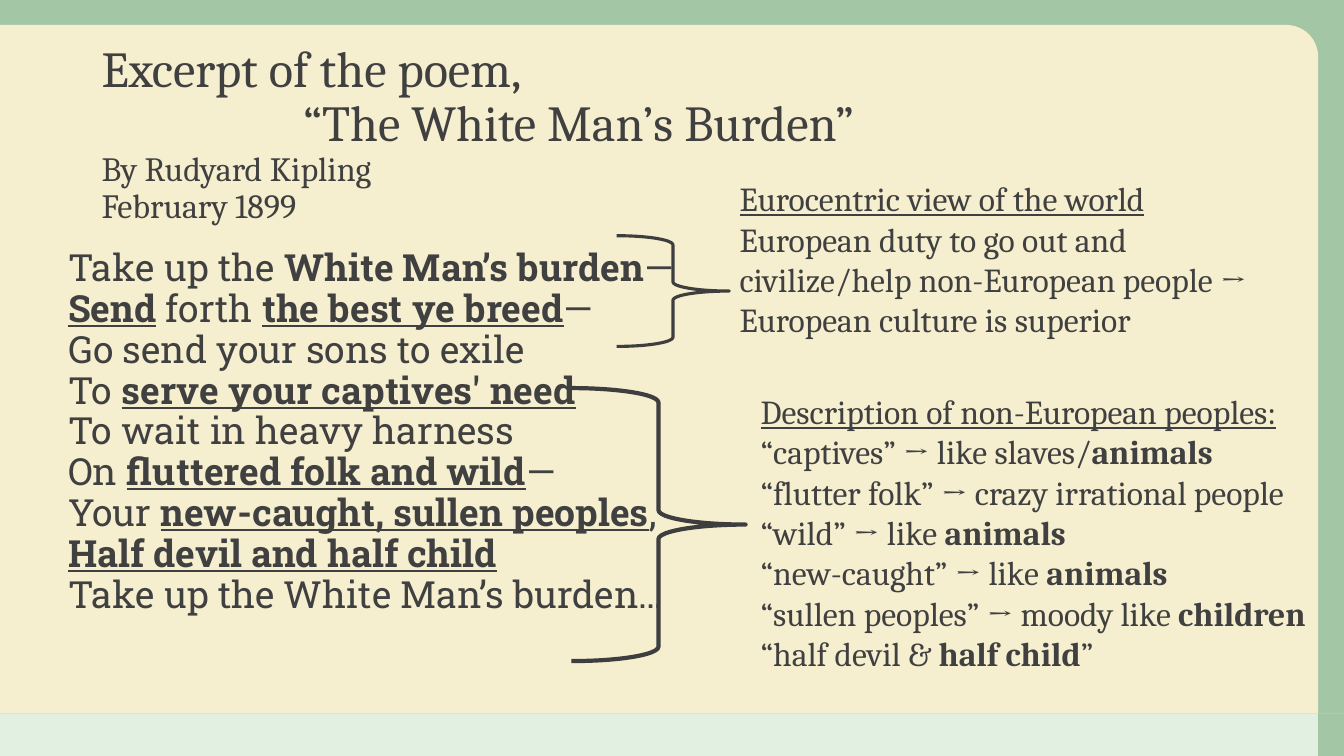
from lxml import etree
from pptx import Presentation
from pptx import util as u
from pptx.dml.color import RGBColor
from pptx.enum import shapes, text
from pptx.oxml.ns import qn

INK = "404040"
BRACE = "3E3E3E"
GREEN = "488E4A"
MINT = "D6EBD6"
CREAM = "F5EECF"
SERIF = "Cambria"
SLAB = "Roboto Slab"


def color(value):
    return RGBColor.from_string(value)


class PoemSlide:
    """Holds the style and the current slide."""

    def __init__(self, deck):
        self.page = deck.slides.add_slide(deck.slide_layouts[6])

    def shape(self, kind, place, adjust=()):
        shape = self.page.shapes.add_shape(kind, *map(u.Cm, place))
        shape.shadow.inherit = False
        for index, value in enumerate(adjust):
            shape.adjustments[index] = value
        return shape

    def panel(self, kind, place, fill, opacity=100, adjust=()):
        panel = self.shape(kind, place, adjust)
        panel.fill.solid()
        panel.fill.fore_color.rgb = color(fill)
        panel.line.fill.background()
        if opacity < 100:
            tint = panel.fill._xPr.find(".//" + qn("a:srgbClr"))
            etree.SubElement(tint, qn("a:alpha"), val=str(opacity * 1000))

    def brace(self, place, weight):
        brace = self.shape(shapes.MSO_SHAPE.RIGHT_BRACE, place, (0.083, 0.5))
        brace.fill.background()
        brace.line.color.rgb = color(BRACE)
        brace.line.width = u.Pt(weight)

    def frame(self, place, anchor=text.MSO_ANCHOR.TOP):
        frame = self.page.shapes.add_textbox(*map(u.Cm, place)).text_frame
        frame.word_wrap = True
        frame.vertical_anchor = anchor
        return frame

    def style(self, span, font, size, marks=""):
        span.font.name = font
        span.font.size = u.Pt(size)
        span.font.color.rgb = color(INK)
        span.font.bold = "b" in marks
        span.font.underline = "u" in marks

    def lines(self, place, font, size, lines, spacing=1.0):
        """Each line is a list of (words, marks): b is bold, u is underlined."""
        frame = self.frame(place)
        for index, line in enumerate(lines):
            para = frame.add_paragraph() if index else frame.paragraphs[0]
            para.line_spacing = spacing
            for words, marks in line:
                span = para.add_run()
                span.text = words
                self.style(span, font, size, marks)

    def title(self, place, lines, tab):
        para = self.frame(place, text.MSO_ANCHOR.BOTTOM).paragraphs[0]
        para.line_spacing = 0.9
        stops = etree.SubElement(para._p.get_or_add_pPr(), qn("a:tabLst"))
        etree.SubElement(stops, qn("a:tab"), pos=str(u.Cm(tab)), algn="l")
        para.text = "\v".join(words for words, size in lines)
        for span, (words, size) in zip(para.runs, lines):
            self.style(span, SERIF, size)


def main():
    deck = Presentation()
    deck.slide_width, deck.slide_height = u.Cm(33.87), u.Cm(19.05)
    slide = PoemSlide(deck)

    # Background panels
    rect = shapes.MSO_SHAPE.RECTANGLE
    slide.panel(rect, (0, 17.98, 33.22, 1.07), MINT, 70)
    slide.panel(rect, (33.22, 17.98, 0.65, 1.07), GREEN, 50)
    slide.panel(rect, (0, 0, 33.87, 17.98), GREEN, 50)
    slide.panel(shapes.MSO_SHAPE.ROUND_1_RECTANGLE,
                (0, 0.63, 33.22, 17.35), CREAM, adjust=(0.046,))

    # Poem
    slide.lines((1.47, 6.15, 16.92, 10.52), SLAB, 26.7, [
        [("Take up the ", ""), ("White Man’s burden", "b"), ("—", "")],
        [("Send", "bu"), (" forth ", ""), ("the best ye breed", "bu"), ("—", "")],
        [("Go send your sons to exile", "")],
        [("To ", ""), ("serve your captives' need", "bu")],
        [("To wait in heavy harness", "")],
        [("On ", ""), ("fluttered folk and wild", "bu"), ("—", "")],
        [("Your ", ""), ("new-caught, sullen peoples", "bu"), (",", "")],
        [("Half devil and half child", "bu")],
        [("Take up the White Man’s burden…", "")],
    ], spacing=0.91)

    # Notes on the poem, with their braces
    slide.lines((18.39, 4.37, 13.28, 4.37), SERIF, 24, [
        [("Eurocentric view of the world", "u"),
         (" European duty to go out and civilize/help non-European people → "
          "European culture is superior", "")],
    ])
    slide.brace((14.4, 9.78, 4.39, 6.88), 3)
    slide.lines((18.92, 9.73, 14.27, 8.46), SERIF, 24, [
        [("Description of non-European peoples:", "u")],
        [("“captives” → like slaves/", ""), ("animals", "b")],
        [("“flutter folk” → crazy irrational people “wild” → like ", ""),
         ("animals", "b")],
        [("“new-caught” → like ", ""), ("animals", "b")],
        [("“sullen peoples” → moody like ", ""), ("children", "b")],
        [("“half devil & ", ""), ("half child", "b"), ("”", "")],
    ])
    slide.brace((15.54, 5.94, 2.84, 2.79), 2.25)

    # Title
    slide.title((2.31, 0.79, 27.94, 5.03), [
        ("Excerpt of the poem,", 36),
        ("\t“The White Man’s Burden”", 36),
        ("By Rudyard Kipling", 24.3),
        ("February 1899", 24.3),
    ], tab=5.08)

    deck.save("out.pptx")


if __name__ == "__main__":
    main()
